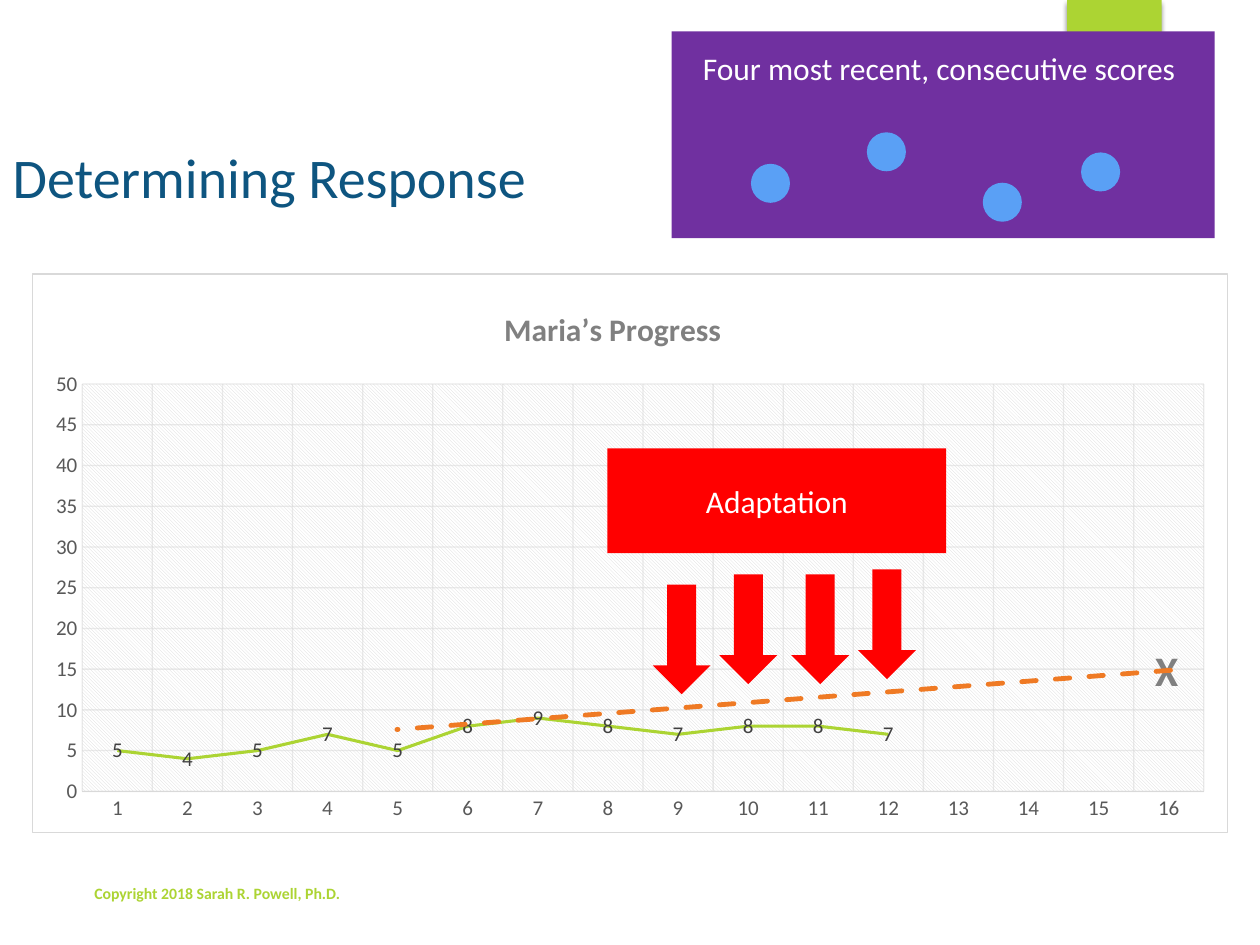
import pptx
import pptx.chart.data
import pptx.dml.color
import pptx.enum.chart
import pptx.enum.dml
import pptx.enum.shapes
import pptx.enum.text
import pptx.oxml
import pptx.oxml.ns
import pptx.util
from pptx.util import Inches

C = dict(lime="ACD433", navy="0E5580", purple="7030A0", blue="5AA0F5", red="FF0000",
         orange="EF7A24", white="FFFFFF", grey="808080", axis="595959",
         label="404040", grid="D9D9D9")
FONT = "Calibri"
SHAPE = pptx.enum.shapes.MSO_SHAPE
ANCHOR = pptx.enum.text.MSO_ANCHOR
ALIGN = pptx.enum.text.PP_ALIGN

# Content
TITLE = "Determining Response"
CHART_TITLE = "Maria’s Progress"
SCORES = [5, 4, 5, 7, 5, 8, 9, 8, 7, 8, 8, 7] + [None] * 4
PANEL_TEXT = "Four most recent, consecutive scores"
COPYRIGHT = "Copyright 2018 Sarah R. Powell, Ph.D."
DOTS = [(5.96, 1.3), (6.88, 1.05), (7.8, 1.45), (8.58, 1.21)]
ARROWS = [(5.18, 4.64), (5.71, 4.56), (6.28, 4.56), (6.81, 4.52)]


def rgb(name):
    return pptx.dml.color.RGBColor.from_string(C[name])


def set_font(font, size, color, bold=False):
    values = dict(name=FONT, size=pptx.util.Pt(size), bold=bold)
    for key, value in values.items():
        setattr(font, key, value)
    font.color.rgb = rgb(color)


def write(sp, text, size, color, bold=False, align=ALIGN.LEFT, **frame):
    tf = sp.text_frame
    for key, value in frame.items():
        setattr(tf, key, value)
    p = tf.paragraphs[0]
    p.alignment = align
    r = p.add_run()
    r.text = text
    set_font(r.font, size, color, bold)


def add_shape(shapes, kind, box, color):
    sp = shapes.add_shape(kind, *map(Inches, box))
    sp.shadow.inherit = False
    sp.fill.solid()
    sp.fill.fore_color.rgb = rgb(color)
    sp.line.fill.background()
    return sp


def add_text(shapes, box, *args, **kwargs):
    write(shapes.add_textbox(*map(Inches, box)), *args, **kwargs)


def xml(tag, body):
    ns = pptx.oxml.ns.nsdecls("c", "a")
    return pptx.oxml.parse_xml(f"<{tag} {ns}>{body}</{tag}>")


def manual_layout(parent, index, inner=False, **fractions):
    for old in parent.findall(pptx.oxml.ns.qn("c:layout")):
        parent.remove(old)
    body = '<c:layoutTarget val="inner"/>' if inner else ""
    body += "".join(f'<c:{k}Mode val="edge"/>' for k in "xy")
    body += "".join(f'<c:{k} val="{v}"/>' for k, v in fractions.items())
    parent.insert(index, xml("c:layout", f"<c:manualLayout>{body}</c:manualLayout>"))


def format_line(line, color, width):
    line.color.rgb = rgb(color)
    line.width = pptx.util.Pt(width)


def add_progress_chart(shapes):
    data = pptx.chart.data.CategoryChartData()
    data.categories = [str(n + 1) for n in range(len(SCORES))]
    data.add_series("Series 1", SCORES)
    XL = pptx.enum.chart
    chart = shapes.add_chart(XL.XL_CHART_TYPE.LINE,
                             *map(Inches, (0.25, 2.17, 9.5, 4.44)), data).chart
    chart.has_legend = False
    chart.font.name, chart.font.size = FONT, pptx.util.Pt(10)
    chart.has_title = True
    write(chart.chart_title, CHART_TITLE, 18, "grey", True, ALIGN.CENTER)
    manual_layout(chart.chart_title._element, 1, x=0.39, y=0.05)

    # Axes and pale gridlines
    for axis in (chart.category_axis, chart.value_axis):
        axis.major_tick_mark = axis.minor_tick_mark = XL.XL_TICK_MARK.NONE
        axis.has_major_gridlines = True
        set_font(axis.tick_labels.font, 12, "axis")
        grid = axis.major_gridlines.format.line
        format_line(grid, "grid", 0.75)
        color = axis.major_gridlines._xAx.find(".//" + pptx.oxml.ns.qn("c:majorGridlines"))
        color.find(".//" + pptx.oxml.ns.qn("a:srgbClr")).append(xml("a:alpha", ""))
        color.find(".//" + pptx.oxml.ns.qn("a:alpha")).set("val", "54000")
    format_line(chart.category_axis.format.line, "grid", 0.75)
    values = dict(minimum_scale=0, maximum_scale=50, major_unit=5)
    for key, value in values.items():
        setattr(chart.value_axis, key, value)
    chart.value_axis.format.line.fill.background()

    # Score line and its labels
    plot = chart.plots[0]
    plot.vary_by_categories = False
    series = plot.series[0]
    series.smooth = False
    format_line(series.format.line, "lime", 1.75)
    labels = series.data_labels
    labels.show_value = True
    labels.position = XL.XL_LABEL_POSITION.CENTER
    set_font(labels.font, 12, "label")

    # Hatched plot area, white framed chart area
    space = chart._chartSpace
    area = space.chart.plotArea
    manual_layout(area, 0, True, x=0.042, y=0.197, w=0.938, h=0.73)
    solid = '<a:solidFill><a:srgbClr val="{}"/></a:solidFill>'
    area.append(xml("c:spPr", f'<a:pattFill prst="ltDnDiag"><a:fgClr><a:srgbClr val="{C["grid"]}"/>'
                    f'</a:fgClr><a:bgClr><a:srgbClr val="{C["white"]}"/></a:bgClr></a:pattFill>'
                    '<a:ln><a:noFill/></a:ln>'))
    space.chart.addnext(xml("c:spPr", solid.format(C["white"])
                            + f'<a:ln w="9525">{solid.format(C["grid"])}</a:ln>'))


def main():
    prs = pptx.Presentation()
    prs.slide_width, prs.slide_height = Inches(10), Inches(7.5)
    s = prs.slides.add_slide(prs.slide_layouts[5])
    shapes = s.shapes

    # Title and corner tab
    title = shapes.title
    box = dict(left=0, top=1.01, width=6.94, height=0.78)
    for key, value in box.items():
        setattr(title, key, Inches(value))
    write(title, TITLE, 32, "navy", vertical_anchor=ANCHOR.MIDDLE)
    tab = add_shape(shapes, SHAPE.RECTANGLE, (8.47, 0, 0.75, 1.2), "lime")
    effects = tab._element.spPr.find(pptx.oxml.ns.qn("a:effectLst"))
    shadow = xml("a:outerShdw", '<a:srgbClr val="000000"><a:alpha val="45000"/></a:srgbClr>')
    for key, value in dict(blurRad=38100, dist=25400, dir=5400000, rotWithShape=0).items():
        shadow.set(key, str(value))
    effects.append(shadow)

    # Chart with goal mark and goal line
    add_progress_chart(shapes)
    add_text(shapes, (9.07, 5.07, 0.76, 0.5), "X", 24, "grey", True, word_wrap=True)
    goal = shapes.add_connector(pptx.enum.shapes.MSO_CONNECTOR.STRAIGHT,
                                *map(Inches, (9.29, 5.32, 3.15, 5.79)))
    format_line(goal.line, "orange", 2.75)
    goal.line.dash_style = pptx.enum.dml.MSO_LINE.DASH
    goal.line._ln.set("cap", "rnd")
    goal._element.spPr.append(xml("a:effectLst", ""))

    # Panel of recent scores
    panel = shapes.add_group_shape().shapes
    add_shape(panel, SHAPE.RECTANGLE, (5.33, 0.25, 4.31, 1.64), "purple")
    for x, y in DOTS:
        add_shape(panel, SHAPE.OVAL, (x, y, 0.31, 0.31), "blue")
    add_text(panel, (5.48, 0.34, 4.16, 0.4), PANEL_TEXT, 18, "white", word_wrap=False)

    # Adaptation box and arrows
    sp = add_shape(shapes, SHAPE.RECTANGLE, (4.82, 3.56, 2.69, 0.83), "red")
    write(sp, "Adaptation", 18, "white", align=ALIGN.CENTER, vertical_anchor=ANCHOR.MIDDLE)
    for x, y in ARROWS:
        add_shape(shapes, SHAPE.DOWN_ARROW, (x, y, 0.46, 0.87), "red")

    # Footer
    add_text(shapes, (0.65, 6.96, 4.22, 0.25), COPYRIGHT, 9, "lime", True,
             word_wrap=True, vertical_anchor=ANCHOR.BOTTOM)
    prs.save("out.pptx")


if __name__ == "__main__":
    main()
